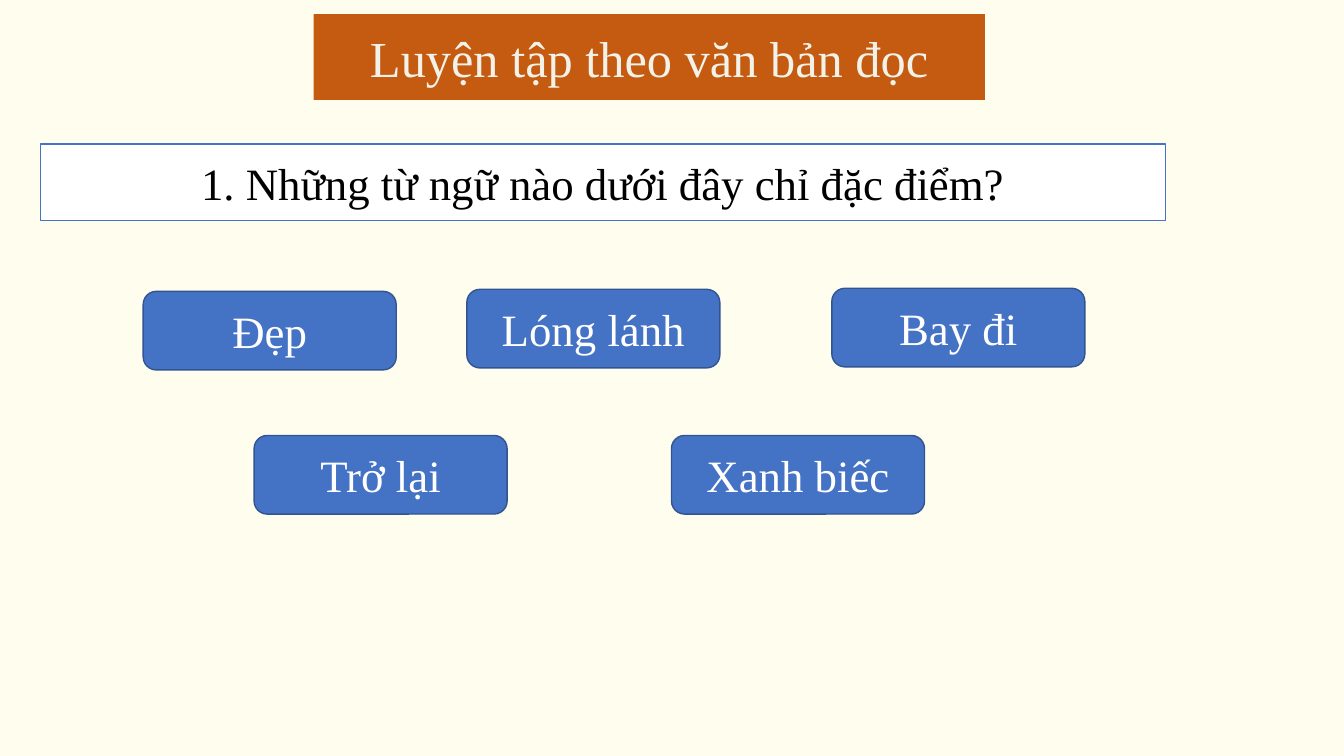
from lxml.etree import SubElement
from pptx import Presentation
from pptx.dml.color import RGBColor
from pptx.enum.shapes import MSO_SHAPE
from pptx.enum.text import MSO_ANCHOR, MSO_AUTO_SIZE, PP_ALIGN
from pptx.oxml.ns import qn
from pptx.util import Inches, Pt

CREAM = RGBColor(0xFF, 0xFD, 0xEE)
IVORY = RGBColor(0xF2, 0xF2, 0xE9)
WHITE = RGBColor(0xFF, 0xFF, 0xFF)
BLACK = RGBColor(0x00, 0x00, 0x00)
ORANGE = RGBColor(0xC5, 0x5A, 0x11)
BLUE = RGBColor(0x44, 0x72, 0xC4)
DARK_BLUE = RGBColor(0x32, 0x54, 0x91)


class QuizPage:
    """Holds the text style and the slide being built."""

    font_name = "Times New Roman"

    def __init__(self, deck):
        self.slide = deck.slides.add_slide(deck.slide_layouts[5])
        self.slide.background.fill.solid()
        self.slide.background.fill.fore_color.rgb = CREAM

    def label(self, shape, text, size, color):
        frame = shape.text_frame
        frame.text = text
        frame.word_wrap = True
        frame.auto_size = MSO_AUTO_SIZE.NONE
        frame.vertical_anchor = MSO_ANCHOR.MIDDLE
        para = frame.paragraphs[0]
        para.alignment = PP_ALIGN.CENTER
        font = para.runs[0].font
        font.name = self.font_name
        font.size = Pt(size)
        font.color.rgb = color

    def title(self, text, left, top, width, height):
        banner = self.slide.shapes.title
        banner.left, banner.top = Inches(left), Inches(top)
        banner.width, banner.height = Inches(width), Inches(height)
        # Rounded outline for the title placeholder
        geometry = SubElement(banner.element.spPr, qn("a:prstGeom"), prst="roundRect")
        SubElement(geometry, qn("a:avLst"))
        banner.fill.solid()
        banner.fill.fore_color.rgb = ORANGE
        self.label(banner, text, 36, IVORY)

    def box(self, kind, text, left, top, width, height, fill, line, color):
        box = self.slide.shapes.add_shape(
            kind, Inches(left), Inches(top), Inches(width), Inches(height))
        box.shadow.inherit = False
        box.fill.solid()
        box.fill.fore_color.rgb = fill
        box.line.color.rgb = line
        box.line.width = Pt(1)
        self.label(box, text, 32, color)

    def question(self, text, left, top, width, height):
        self.box(MSO_SHAPE.RECTANGLE, text, left, top, width, height,
                 WHITE, BLUE, BLACK)

    def answer(self, text, left, top):
        self.box(MSO_SHAPE.ROUNDED_RECTANGLE, text, left, top, 2.51, 0.78,
                 BLUE, DARK_BLUE, WHITE)


def main():
    deck = Presentation()
    deck.slide_width, deck.slide_height = Inches(13.33), Inches(7.5)
    page = QuizPage(deck)

    # Heading and question
    page.title("Luyện tập theo văn bản đọc", 3.11, 0.14, 6.66, 0.85)
    page.question("1. Những từ ngữ nào dưới đây chỉ đặc điểm?",
                  0.4, 1.43, 11.16, 0.76)

    # Answer choices
    answers = [
        ("Đẹp", 1.42, 2.89),
        ("Lóng lánh", 4.63, 2.87),
        ("Bay đi", 8.25, 2.86),
        ("Trở lại", 2.52, 4.32),
        ("Xanh biếc", 6.66, 4.32),
    ]
    for text, left, top in answers:
        page.answer(text, left, top)

    deck.save("out.pptx")


if __name__ == "__main__":
    main()
